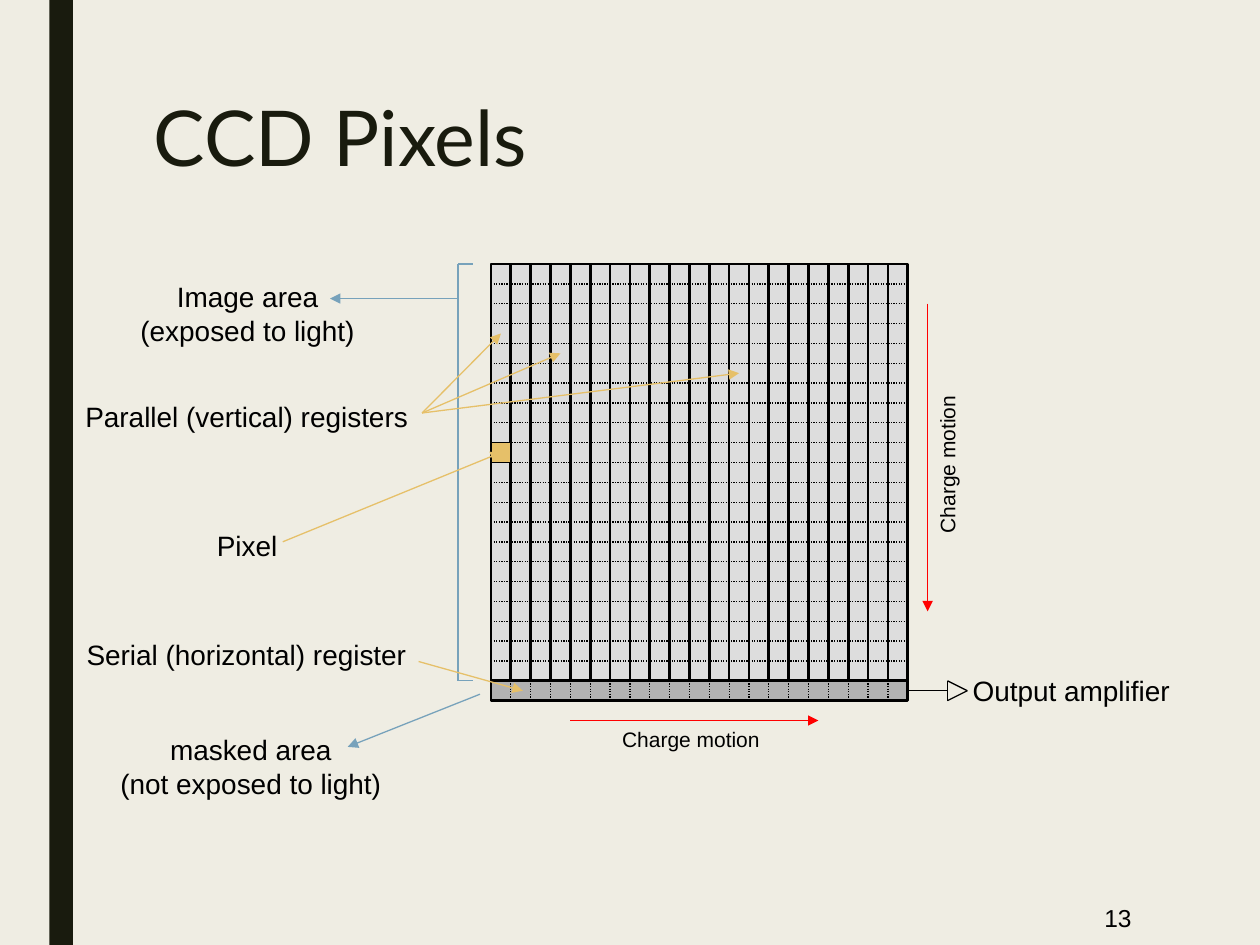
from dataclasses import dataclass

from lxml import etree
from pptx import Presentation
from pptx import util as u
from pptx.dml.color import RGBColor
from pptx.enum import dml, shapes, text
from pptx.oxml import ns

COLORS = {
    "background": "EFEDE3", "dark": "191B0E", "black": "000000",
    "column": "DDDDDD", "serial": "B2B2B2", "gold": "E6C069",
    "blue": "77A2BB", "red": "FF0000",
}
CELL = 11.34
COUNT = 21
LEFT, TOP = 280.6, 150.9
RIGHT, BOTTOM = LEFT + COUNT * CELL, TOP + COUNT * CELL
SERIAL_MIDDLE = BOTTOM + CELL / 2
BRACKET, BRACKET_TIP = 261.8, 270
REGISTERS_ORIGIN = (241.2, 236)


@dataclass
class Label:
    lines: tuple[str, ...]
    left: float
    top: float
    width: float
    height: float
    size: float = 16
    font: str = "Arial"
    color: str = "black"
    align: text.PP_ALIGN = text.PP_ALIGN.LEFT
    anchor: text.MSO_ANCHOR = text.MSO_ANCHOR.TOP
    wrap: bool = False
    spacing: float = 1.0
    rotation: float = 0


@dataclass
class Line:
    start: tuple[float, float]
    end: tuple[float, float]
    color: str = "black"
    arrow: bool = False
    dotted: bool = False


@dataclass
class Box:
    left: float
    top: float
    width: float
    height: float
    fill: str
    outline: float = 0


def rgb(name: str) -> RGBColor:
    return RGBColor.from_string(COLORS[name])


def apply(target, values: dict) -> None:
    for name, value in values.items():
        setattr(target, name, value)


def draw_box(slide, box: Box):
    rect = slide.shapes.add_shape(
        shapes.MSO_SHAPE.RECTANGLE,
        u.Pt(box.left), u.Pt(box.top), u.Pt(box.width), u.Pt(box.height))
    rect.shadow.inherit = False
    rect.fill.solid()
    rect.fill.fore_color.rgb = rgb(box.fill)
    if box.outline:
        rect.line.color.rgb = rgb("black")
        rect.line.width = u.Pt(box.outline)
    else:
        rect.line.fill.background()
    return rect


def draw_line(slide, line: Line):
    connector = slide.shapes.add_connector(
        shapes.MSO_CONNECTOR.STRAIGHT,
        *(u.Pt(value) for value in (*line.start, *line.end)))
    connector.line.color.rgb = rgb(line.color)
    connector.line.width = u.Pt(0.75)
    if line.dotted:
        connector.line.dash_style = dml.MSO_LINE.ROUND_DOT
    if line.arrow:
        etree.SubElement(connector.line._get_or_add_ln(), ns.qn("a:tailEnd"), type="triangle")
    etree.SubElement(connector._element.spPr, ns.qn("a:effectLst"))
    return connector


def draw_label(slide, label: Label) -> None:
    box = slide.shapes.add_textbox(
        u.Pt(label.left), u.Pt(label.top), u.Pt(label.width), u.Pt(label.height))
    box.rotation = label.rotation
    frame = box.text_frame
    apply(frame, {"word_wrap": label.wrap, "vertical_anchor": label.anchor})
    for index, line in enumerate(label.lines):
        paragraph = frame.add_paragraph() if index else frame.paragraphs[0]
        apply(paragraph, {"text": line, "alignment": label.align, "line_spacing": label.spacing})
        apply(paragraph.font, {"size": u.Pt(label.size), "name": label.font})
        paragraph.font.color.rgb = rgb(label.color)


def draw_sensor(slide) -> None:
    """Draw the pixel grid, the serial register below it and the amplifier."""
    for column in range(COUNT):
        draw_box(slide, Box(LEFT + column * CELL, TOP, CELL, COUNT * CELL, "column", 1.5))
    serial = draw_box(slide, Box(LEFT, BOTTOM, COUNT * CELL, CELL, "serial", 1.5))
    for step in range(1, COUNT):
        x, y = LEFT + step * CELL, TOP + step * CELL
        draw_line(slide, Line((LEFT, y), (RIGHT, y), dotted=True))
        draw_line(slide, Line((x, BOTTOM), (x, BOTTOM + CELL), dotted=True))

    base, tip = RIGHT + 2 * CELL, (RIGHT + 3 * CELL, SERIAL_MIDDLE)
    output = draw_line(slide, Line((RIGHT, SERIAL_MIDDLE), (base, SERIAL_MIDDLE)))
    output.begin_connect(serial, 3)
    upper, lower = (base, BOTTOM), (base, BOTTOM + CELL)
    for start, end in ((upper, lower), (lower, tip), (upper, tip)):
        draw_line(slide, Line(start, end))

    draw_box(slide, Box(LEFT, TOP + 9 * CELL, CELL, CELL, "gold", 0.75))


CENTER = text.PP_ALIGN.CENTER
MIDDLE = text.MSO_ANCHOR.MIDDLE

LABELS = [
    Label(("13",), 559.4, 508.3, 94.3, 31.7, 14, align=text.PP_ALIGN.RIGHT,
          anchor=MIDDLE, wrap=True),
    Label(("CCD Pixels",), 80.7, 54, 567.3, 57.6, 44, "Lato", "dark", wrap=True, spacing=0.89),
    Label(("Charge motion",), 348.4, 411.8, 92.9, 21.6, 12),
    Label(("Charge motion",), 494.8, 254.6, 92.9, 21.6, 12, rotation=270),
    Label(("Serial (horizontal) register",), 42.4, 361, 197.3, 26.6),
    Label(("Parallel (vertical) registers",), 41.7, 224.9, 199.4, 26.6),
    Label(("Pixel",), 116.8, 298.4, 49, 26.6),
    Label(("Image area", "(exposed to light)"), 72.7, 156.3, 137.5, 46.1, align=CENTER),
    Label(("Output amplifier",), 548.8, 381.5, 127.4, 26.6),
    Label(("masked area", "(not exposed to light)"), 61.2, 415.3, 164.2, 46.1, align=CENTER),
]

CHARGE_MOTION = [
    Line((RIGHT + CELL, TOP + 2 * CELL), (RIGHT + CELL, TOP + 17.5 * CELL), "red", True),
    Line((LEFT + 4 * CELL, BOTTOM + 2 * CELL), (LEFT + 16.5 * CELL, BOTTOM + 2 * CELL),
         "red", True),
]

IMAGE_BRACKET = [
    Line((BRACKET, BOTTOM), (BRACKET_TIP, BOTTOM), "blue"),
    Line((BRACKET, BOTTOM), (BRACKET, TOP), "blue"),
    Line((BRACKET, TOP), (BRACKET_TIP, TOP), "blue"),
]

POINTERS = [
    *(Line(REGISTERS_ORIGIN, (LEFT + column * CELL, TOP + row * CELL), "gold", True)
      for column, row in ((0.5, 3.5), (3.5, 4.5), (12.5, 5.5))),
    Line((161.6, 309.6), (LEFT + CELL / 2, TOP + 9.5 * CELL), "gold", True),
    Line((239.2, 378), (LEFT + 1.6 * CELL, SERIAL_MIDDLE), "gold", True),
    Line((BRACKET, 170.6), (188.6, 170.6), "blue", True),
    Line((274.3, 396.7), (198.7, 426.8), "blue", True),
]


def main() -> None:
    deck = Presentation()
    apply(deck, {"slide_width": u.Pt(720), "slide_height": u.Pt(540)})
    slide = deck.slides.add_slide(deck.slide_layouts[6])
    slide.background.fill.solid()
    slide.background.fill.fore_color.rgb = rgb("background")

    draw_box(slide, Box(28.2, 0, 13.5, 540, "dark"))
    draw_sensor(slide)
    for line in CHARGE_MOTION + IMAGE_BRACKET + POINTERS:
        draw_line(slide, line)
    for label in LABELS:
        draw_label(slide, label)
    deck.save("out.pptx")


if __name__ == "__main__":
    main()
